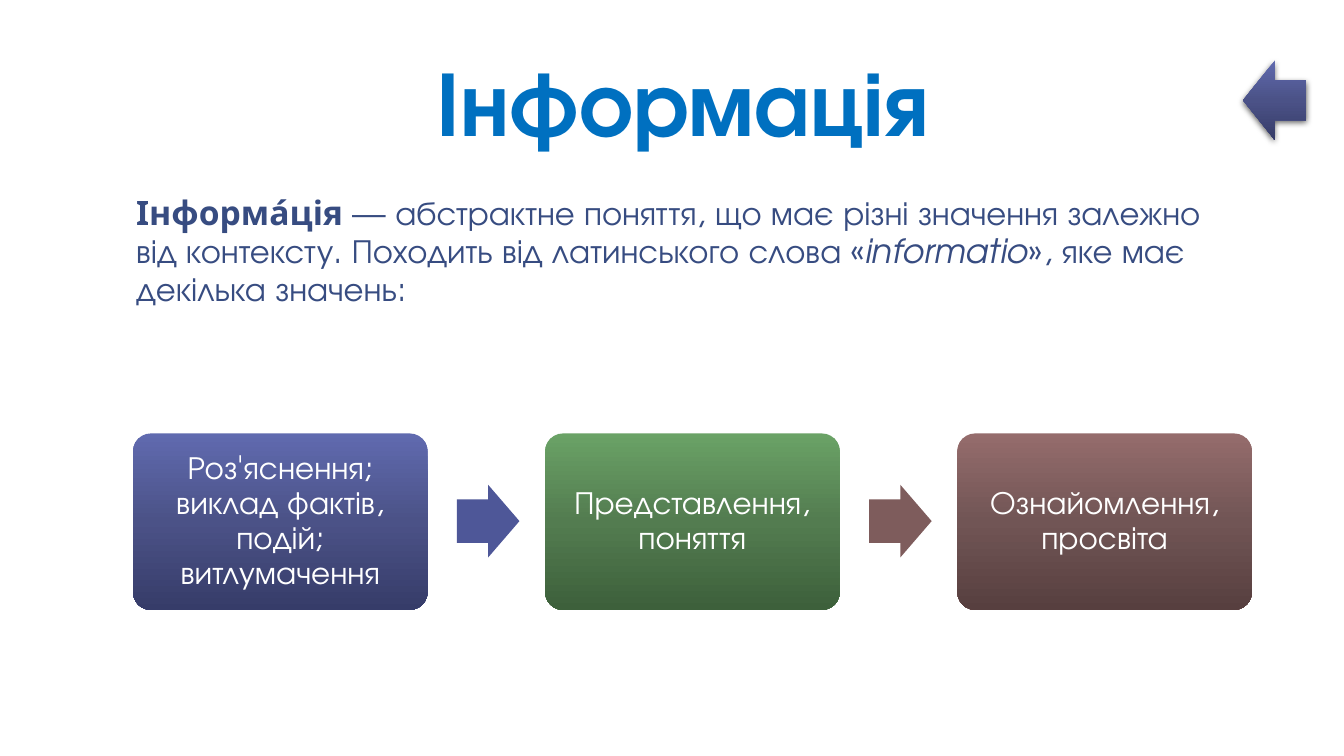
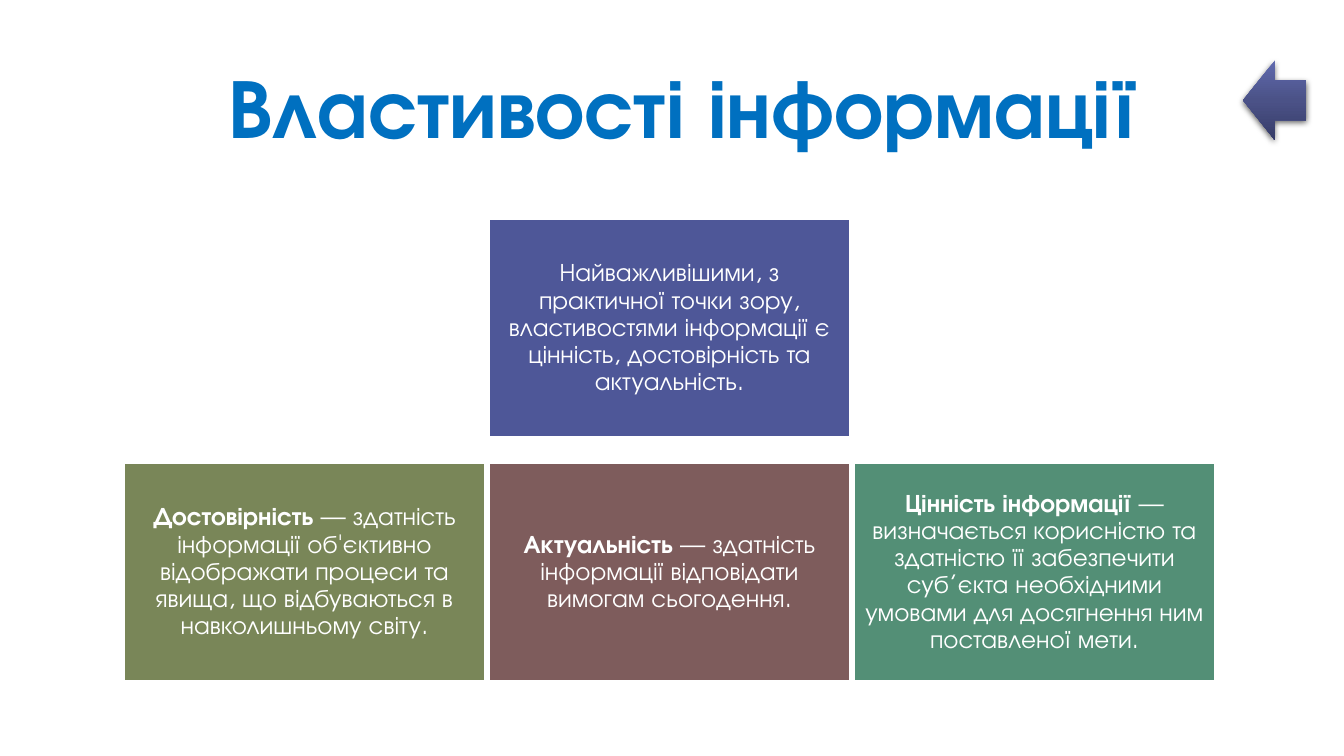
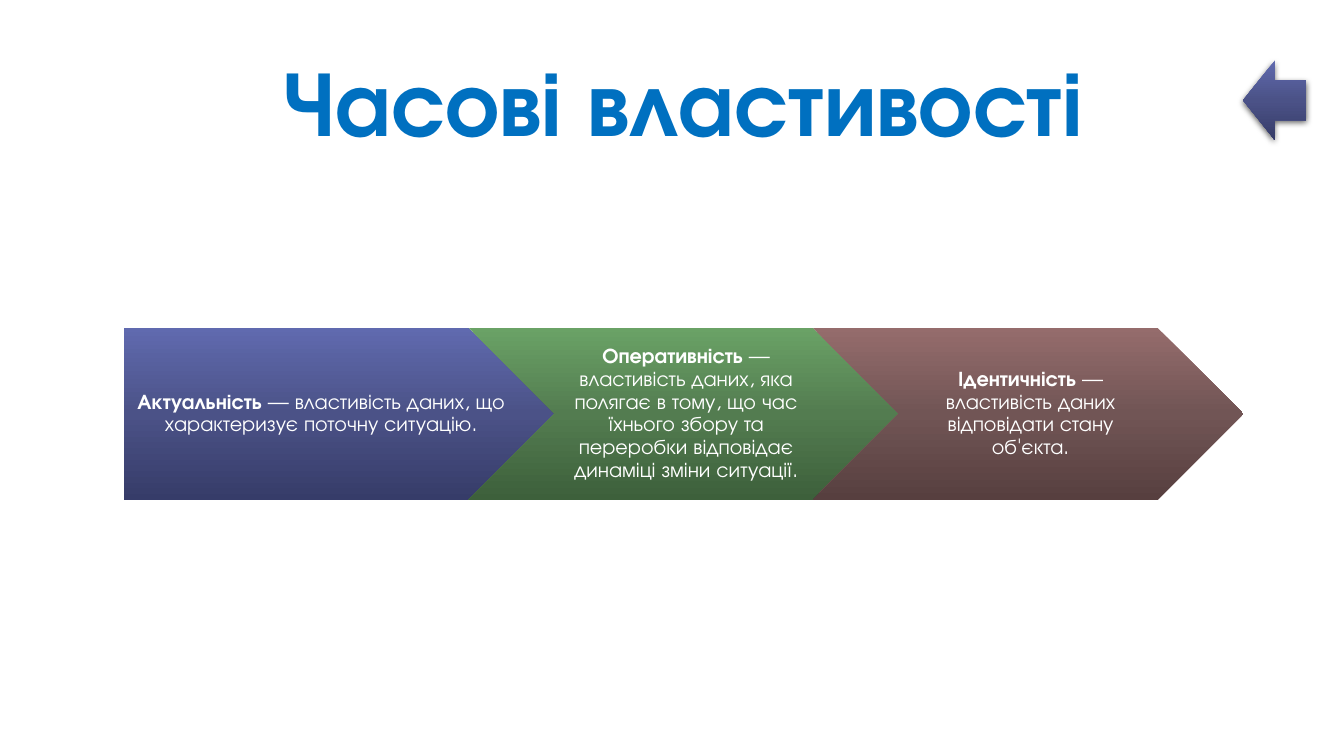
"""Build three slides about information and its properties."""
from copy import deepcopy

from lxml.etree import SubElement
from pptx import Presentation
from pptx.dml.color import RGBColor
from pptx.enum.shapes import MSO_SHAPE as Preset
from pptx.enum.text import MSO_ANCHOR as Anchor, PP_ALIGN as Align
from pptx.oxml.ns import qn
from pptx.util import Inches, Pt

FONT = "TeX Gyre Adventor"
WHITE = RGBColor(0xFF, 0xFF, 0xFF)
TITLE_BLUE = RGBColor(0x00, 0x70, 0xC0)
BODY_BLUE = RGBColor(0x37, 0x4C, 0x81)
INDIGO = RGBColor(0x4E, 0x57, 0x98)
OLIVE = RGBColor(0x79, 0x86, 0x58)
BROWN = RGBColor(0x7E, 0x5C, 0x5C)
TEAL = RGBColor(0x53, 0x8F, 0x76)
INDIGO_SHADES = (RGBColor(0x60, 0x6A, 0xAF), RGBColor(0x4B, 0x52, 0x87), RGBColor(0x36, 0x3C, 0x69))
GREEN_SHADES = (RGBColor(0x6A, 0xA2, 0x66), RGBColor(0x53, 0x7C, 0x50), RGBColor(0x3D, 0x60, 0x3B))
BROWN_SHADES = (RGBColor(0x95, 0x6C, 0x6C), RGBColor(0x71, 0x55, 0x55), RGBColor(0x57, 0x3F, 0x3F))
SHADES = (INDIGO_SHADES, GREEN_SHADES, BROWN_SHADES)


def write(shape, parts, size, color, insets, anchor=Anchor.MIDDLE, align=Align.CENTER, spacing=0.9):
    """Fill a shape with one paragraph of (text, style) parts."""
    frame = shape.text_frame
    frame.word_wrap = True
    frame.vertical_anchor = anchor
    frame.margin_left, frame.margin_top, frame.margin_right, frame.margin_bottom = map(Inches, insets)
    paragraph = frame.paragraphs[0]
    paragraph.alignment = align
    paragraph.line_spacing = spacing
    for text, style in parts:
        run = paragraph.add_run()
        run.text = text
        run.font.name = FONT
        run.font.size = Pt(size)
        run.font.color.rgb = color
        run.font.bold = style == "bold"
        run.font.italic = style == "italic"


def add_text(slide, box, parts, size, color, **layout):
    """Add a text box."""
    shape = slide.shapes.add_textbox(*map(Inches, box))
    write(shape, parts, size, color, (0.13, 0.07, 0.13, 0.07), **layout)


def add_block(slide, preset, box, fill, adjustments=(), border=None):
    """Add a preset shape with a plain colour or a gradient of three shades."""
    shape = slide.shapes.add_shape(preset, *map(Inches, box))
    shape.shadow.inherit = False
    for index, value in enumerate(adjustments):
        shape.adjustments[index] = value
    if isinstance(fill, RGBColor):
        shape.fill.solid()
        shape.fill.fore_color.rgb = fill
    else:
        shape.fill.gradient()
        shape.fill.gradient_angle = 270
        stop_list = next(shape.element.iter(qn("a:gsLst")))
        stop_list.append(deepcopy(stop_list[-1]))
        for stop, position, shade in zip(shape.fill.gradient_stops, (0, 0.5, 1), fill):
            stop.position = position
            stop.color.rgb = shade
    if border is None:
        shape.line.fill.background()
    else:
        shape.line.color.rgb = border
        shape.line.width = Pt(1)
    return shape


def add_shadow(shape):
    """Give a shape a soft shadow below it."""
    effects = next(shape.element.iter(qn("a:effectLst")))
    shadow = SubElement(effects, qn("a:outerShdw"), blurRad=str(Pt(4.5)), dist=str(Pt(1.5)),
                        dir="5400000", rotWithShape="0")
    color = SubElement(shadow, qn("a:srgbClr"), val="000000")
    SubElement(color, qn("a:alpha"), val="63000")


def add_slide(presentation, title, size=66):
    """Add a slide with its title and back arrow."""
    slide = presentation.slides.add_slide(presentation.slide_layouts[6])
    add_text(slide, (1.22, 0.08, 11.11, 1.53), [(title, "bold")], size, TITLE_BLUE,
             anchor=Anchor.BOTTOM, spacing=0.85)
    add_shadow(add_block(slide, Preset.LEFT_ARROW, (12.33, 0.6, 0.63, 0.79), INDIGO_SHADES))
    return slide


def add_process(slide, steps):
    """Add rounded boxes in a row with arrows between them."""
    left, width = 1.32, 2.92
    for index, (text, shades) in enumerate(zip(steps, SHADES)):
        x = left + index * 1.4 * width
        box = add_block(slide, Preset.ROUNDED_RECTANGLE, (x, 4.3, width, 1.75), shades, [0.1])
        write(box, [(text, None)], 23, WHITE, (0.1, 0.1, 0.1, 0.1))
    for index, color in enumerate((INDIGO, BROWN)):
        x = left + (index * 1.4 + 1.1) * width
        add_block(slide, Preset.RIGHT_ARROW, (x, 4.81, 0.62, 0.72), color, [0.6, 0.5])


def add_card(slide, column, top, color, parts):
    """Add a card in one of three columns."""
    card = add_block(slide, Preset.RECTANGLE, (1.23 + column * 3.62, top, 3.58, 2.15), color, border=WHITE)
    write(card, parts, 18, WHITE, (0.07, 0.07, 0.07, 0.07))


def add_chevrons(slide, steps):
    """Add a chain of overlapping chevrons that starts with a pentagon."""
    width = 4.27
    for index, (parts, shades) in enumerate(zip(steps, SHADES)):
        preset = Preset.CHEVRON if index else Preset.PENTAGON
        chevron = add_block(slide, preset, (1.23 + index * 0.8 * width, 3.25, width, 1.71), shades)
        write(chevron, parts, 15, WHITE, (0.07 if index else 0.09, 0.04, 0.02, 0.04))


def term(name, meaning):
    """Return the parts of a definition with its term in bold."""
    return [(name, "bold"), (f" — {meaning}", None)]


def main():
    """Build and save the presentation."""
    presentation = Presentation()
    presentation.slide_width, presentation.slide_height = Inches(13.33), Inches(7.5)

    slide = add_slide(presentation, "Інформація")
    definition = term("Інформа́ція", "абстрактне поняття, що має різні значення залежно від контексту. "
                      "Походить від латинського слова «")
    definition += [("informatio", "italic"), ("», яке має декілька значень:", None)]
    add_text(slide, (1.22, 1.86, 11.11, 1.5), definition, 24, BODY_BLUE,
             anchor=Anchor.TOP, align=Align.LEFT, spacing=0.95)
    add_process(slide, ("Роз'яснення; виклад фактів, подій; витлумачення",
                        "Представлення, поняття", "Ознайомлення, просвіта"))

    slide = add_slide(presentation, "Властивості інформації", 60)
    add_card(slide, 1, 2.18, INDIGO, [(
        "Найважливішими, з практичної точки зору, властивостями інформації є цінність, "
        "достовірність та актуальність.", None)])
    properties = (
        (OLIVE, "Достовірність", "здатність інформації об'єктивно відображати процеси та явища, "
         "що відбуваються в навколишньому світу."),
        (BROWN, "Актуальність", "здатність інформації відповідати вимогам сьогодення."),
        (TEAL, "Цінність інформації", "визначається корисністю та здатністю її забезпечити суб’єкта "
         "необхідними умовами для досягнення ним поставленої мети."),
    )
    for column, (color, name, meaning) in enumerate(properties):
        add_card(slide, column, 4.6, color, term(name, meaning))

    slide = add_slide(presentation, "Часові властивості")
    add_chevrons(slide, (
        term("Актуальність", "властивість даних, що характеризує поточну ситуацію."),
        term("Оперативність", "властивість даних, яка полягає в тому, що час їхнього збору "
             "та переробки відповідає динаміці зміни ситуації."),
        term("Ідентичність", "властивість даних відповідати стану об'єкта."),
    ))

    presentation.save("out.pptx")


if __name__ == "__main__":
    main()
